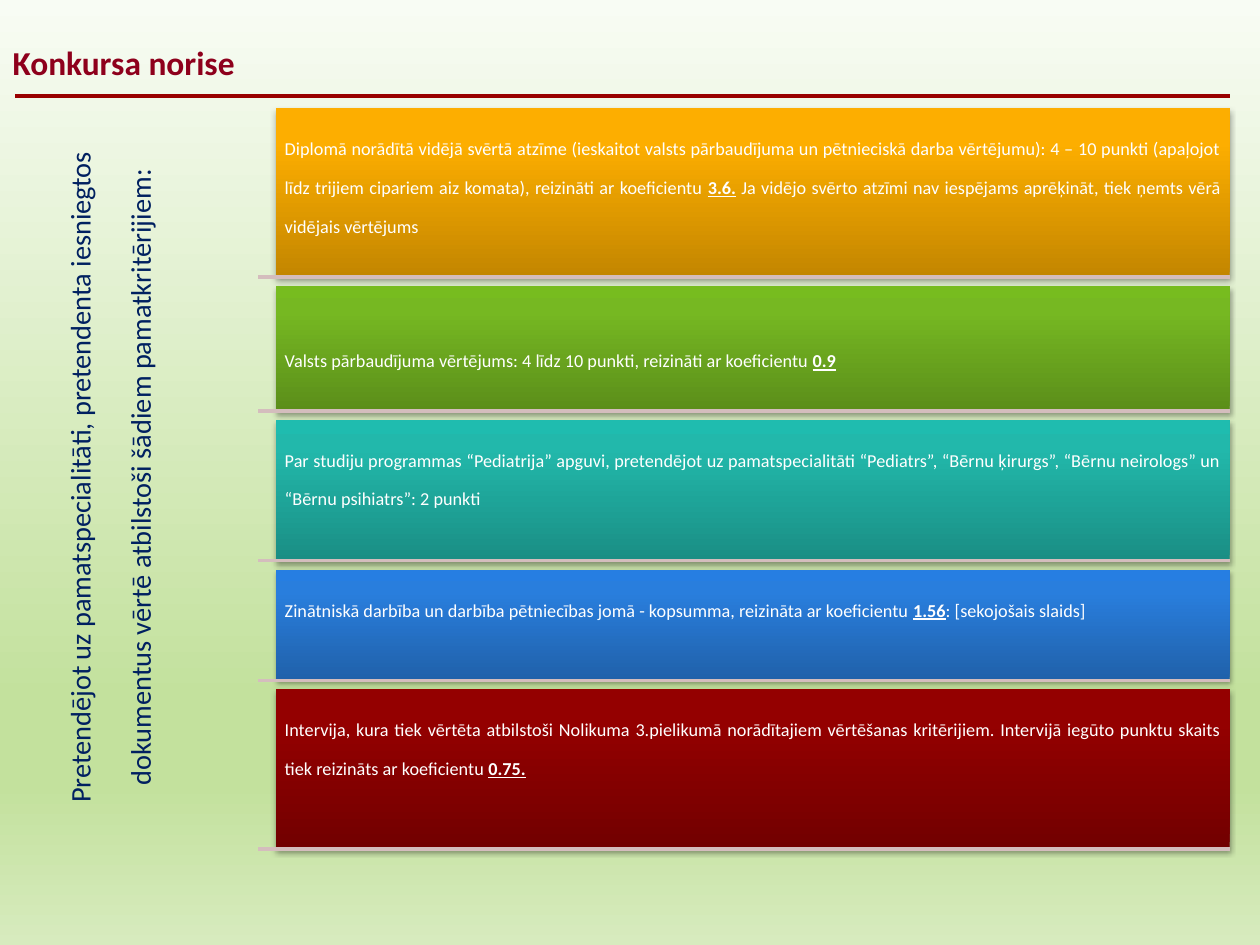
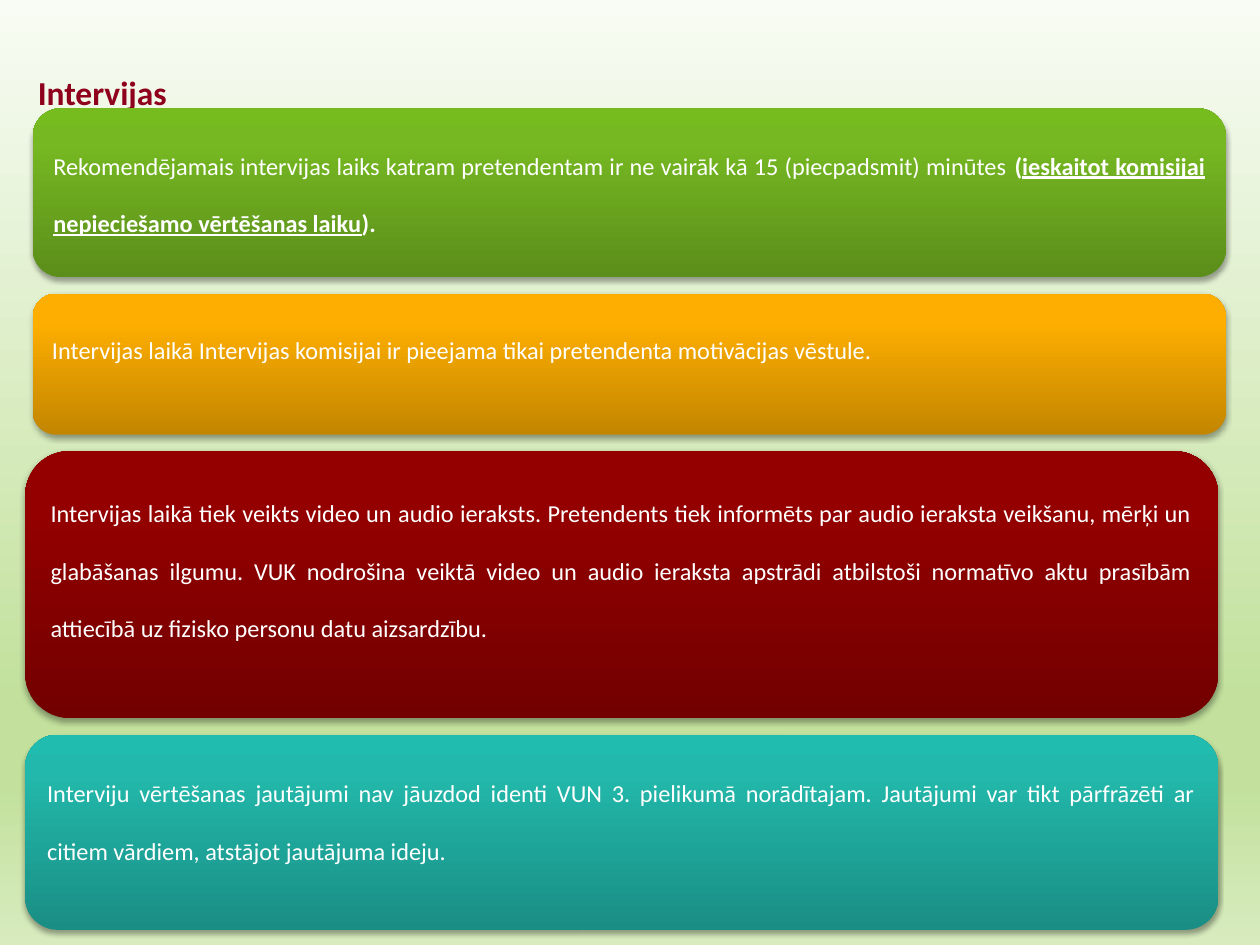
from lxml import etree
from pptx import Presentation
from pptx.dml.color import RGBColor
from pptx.enum.shapes import MSO_CONNECTOR, MSO_SHAPE
from pptx.enum.text import MSO_ANCHOR, MSO_AUTO_SIZE, PP_ALIGN
from pptx.oxml import parse_xml
from pptx.oxml.ns import nsdecls, qn
from pptx.util import Inches, Pt

COLORS = {"title": "8E001C", "title_rule": "990000", "row_rule": "D4BDBD",
          "side_label": "002060", "white": "FFFFFF"}
BACKGROUND = [(0, "F8FCF4"), (74, "C3E19D"), (83, "C3E19D"), (100, "D7EBBE")]
GRADIENTS = {
    "orange": [(0, "C38600"), (80, "FDAE00"), (100, "FEAE00")],
    "green": [(0, "5B8E1A"), (80, "76B822"), (100, "77BC1F")],
    "teal": [(0, "1A8E84"), (80, "22B8AB"), (100, "1FBCAF")],
    "blue": [(0, "2061AA"), (80, "297EDD"), (100, "267EE2")],
    "red": [(0, "720000"), (80, "940000"), (100, "950000")],
}
SHADOW = (f'<a:outerShdw {nsdecls("a")} blurRad="{Pt(3.1)}" dist="{Pt(1.8)}" dir="5400000" '
          'rotWithShape="0"><a:srgbClr val="000000"><a:alpha val="35000"/></a:srgbClr></a:outerShdw>')


def paint_gradient(owner, fill, stops, angle):
    """Fill the owner with any number of (percent, colour) stops."""
    fill.gradient()
    fill.gradient_angle = angle
    stop_list = owner.element.xpath(".//a:gsLst")[0]
    for stop in list(stop_list):
        stop_list.remove(stop)
    for percent, color in stops:
        stop = etree.SubElement(stop_list, qn("a:gs"), pos=str(percent * 1000))
        etree.SubElement(stop, qn("a:srgbClr"), val=color)


def write(frame, runs, size, color="white", align=PP_ALIGN.JUSTIFY,
          anchor=MSO_ANCHOR.TOP, spacing=0.9, inset=None):
    """Write (text, style) runs as lowered text; style holds b for bold, u for underline."""
    frame.word_wrap = True
    frame.auto_size = MSO_AUTO_SIZE.NONE
    frame.vertical_anchor = anchor
    if inset is not None:
        frame.margin_left = frame.margin_right = Inches(inset)
        frame.margin_top = frame.margin_bottom = Inches(inset)
    paragraph = frame.paragraphs[0]
    paragraph.alignment = align
    paragraph.line_spacing = spacing
    for text, style in runs:
        run = paragraph.add_run()
        run.text = text
        run.font.name = "Calibri"
        run.font.size = Pt(size)
        run.font.color.rgb = RGBColor.from_string(COLORS[color])
        run.font.bold = "b" in style
        run.font.underline = "u" in style
        run.font._element.set("baseline", "-25000")


prs = Presentation()
prs.slide_width, prs.slide_height = Inches(10), Inches(7.5)
paint_gradient(prs.slide_master, prs.slide_master.background.fill, BACKGROUND, 270)

LEFT, RIGHT, FIRST_TOP = 0.12, 9.76, 0.86
RULE_LEFT, ROW_LEFT = 2.05, 2.19
TITLE_RULE_Y = 0.76

# Each band: left, height, gradient, anchor, runs
criteria = [
    (ROW_LEFT, 1.34, "orange", MSO_ANCHOR.TOP, [
        ("Diplomā norādītā vidējā svērtā atzīme (ieskaitot valsts pārbaudījuma un pētnieciskā darba "
         "vērtējumu): 4 – 10 punkti (apaļojot līdz trijiem cipariem aiz komata), reizināti ar "
         "koeficientu ", ""),
        ("3.6.", "bu"),
        (" Ja vidējo svērto atzīmi nav iespējams aprēķināt, tiek ņemts vērā vidējais vērtējums", "")]),
    (ROW_LEFT, 0.99, "green", MSO_ANCHOR.MIDDLE, [
        ("Valsts pārbaudījuma vērtējums: 4 līdz 10 punkti, reizināti ar koeficientu ", ""),
        ("0.9", "bu")]),
    (ROW_LEFT, 1.12, "teal", MSO_ANCHOR.TOP, [
        ("Par studiju programmas “Pediatrija” apguvi, pretendējot uz pamatspecialitāti “Pediatrs”, "
         "“Bērnu ķirurgs”, “Bērnu neirologs” un “Bērnu psihiatrs”: 2 punkti", "")]),
    (ROW_LEFT, 0.88, "blue", MSO_ANCHOR.TOP, [
        ("Zinātniskā darbība un darbība pētniecības jomā - kopsumma, reizināta ar koeficientu ", ""),
        ("1.56", "bu"),
        (": [sekojošais slaids]", "")]),
    (ROW_LEFT, 1.27, "red", MSO_ANCHOR.TOP, [
        ("Intervija, kura tiek vērtēta atbilstoši Nolikuma 3.pielikumā norādītajiem vērtēšanas "
         "kritērijiem. Intervijā iegūto punktu skaits tiek reizināts ar koeficientu ", ""),
        ("0.75.", "bu")]),
]
interview_rules = [
    (0.26, 1.34, "green", MSO_ANCHOR.TOP, [
        ("Rekomendējamais intervijas laiks katram pretendentam ir ne vairāk kā 15 (piecpadsmit) "
         "minūtes ", ""),
        ("(", "b"),
        ("ieskaitot komisijai nepieciešamo vērtēšanas laiku", "bu"),
        (").", "b")]),
    (0.26, 1.12, "orange", MSO_ANCHOR.TOP, [
        ("Intervijas laikā Intervijas komisijai ir pieejama tikai pretendenta motivācijas vēstule.",
         "")]),
    (0.2, 2.12, "red", MSO_ANCHOR.TOP, [
        ("Intervijas laikā tiek veikts video un audio ieraksts. Pretendents tiek informēts par audio "
         "ieraksta veikšanu, mērķi un glabāšanas ilgumu. VUK nodrošina veiktā video un audio ieraksta "
         "apstrādi atbilstoši normatīvo aktu prasībām attiecībā uz fizisko personu datu aizsardzību.",
         "")]),
    (0.2, 1.55, "teal", MSO_ANCHOR.TOP, [
        ("Interviju vērtēšanas jautājumi nav jāuzdod identi VUN 3. pielikumā norādītajam. Jautājumi "
         "var tikt pārfrāzēti ar citiem vārdiem, atstājot jautājuma ideju.", "")]),
]

# Each slide: title, title left/top/height, title bottom margin, bands, band outline, width, gap, text format
pages = [
    ("Konkursa norise", (0, -0.02, 1.17), 0.55, criteria, MSO_SHAPE.RECTANGLE, 7.57, 0.07,
     {"size": 18, "inset": 0.07}),
    ("Intervijas", (0.2, 0.11, 0.89), 0.05, interview_rules, MSO_SHAPE.ROUNDED_RECTANGLE, 9.47, 0.13,
     {"size": 24, "spacing": 1.0}),
]

for heading, (title_left, title_top, title_height), bottom_margin, bands, outline, width, gap, style in pages:
    slide = prs.slides.add_slide(prs.slide_layouts[5])
    title = slide.shapes.title
    title.left, title.top = Inches(title_left), Inches(title_top)
    title.width, title.height = Inches(9.26), Inches(title_height)
    title.text_frame.margin_bottom = Inches(bottom_margin)
    write(title.text_frame, [(heading, "b")], size=33, color="title", align=PP_ALIGN.LEFT,
          anchor=MSO_ANCHOR.MIDDLE)

    rules = []
    top = FIRST_TOP
    for left, height, gradient, anchor, runs in bands:
        band = slide.shapes.add_shape(outline, Inches(left), Inches(top), Inches(width), Inches(height))
        paint_gradient(band, band.fill, GRADIENTS[gradient], 90)
        band.line.fill.background()
        band.shadow.inherit = False
        band.element.spPr.find(qn("a:effectLst")).append(parse_xml(SHADOW))
        write(band.text_frame, runs, anchor=anchor, **style)
        rules.append((RULE_LEFT, top + height, "row_rule"))
        top += height + gap

    if bands is criteria:
        rules.append((LEFT, TITLE_RULE_Y, "title_rule"))
        for rule_left, y, color in rules:
            rule = slide.shapes.add_connector(MSO_CONNECTOR.STRAIGHT, Inches(rule_left), Inches(y),
                                              Inches(RIGHT), Inches(y))
            rule.line.color.rgb = RGBColor.from_string(COLORS[color])
            rule.line.width = Pt(2)
            etree.SubElement(rule.element.spPr, qn("a:effectLst"))

        side_label = slide.shapes.add_textbox(Inches(LEFT), Inches(TITLE_RULE_Y),
                                              Inches(RULE_LEFT - LEFT), Inches(6.06))
        side_label.text_frame._txBody.bodyPr.set("vert", "vert270")
        write(side_label.text_frame,
              [("Pretendējot uz pamatspecialitāti, pretendenta iesniegtos dokumentus vērtē atbilstoši "
                "šādiem pamatkritērijiem:", "")],
              size=28, color="side_label", align=PP_ALIGN.CENTER, inset=0.12)

prs.save("out.pptx")
